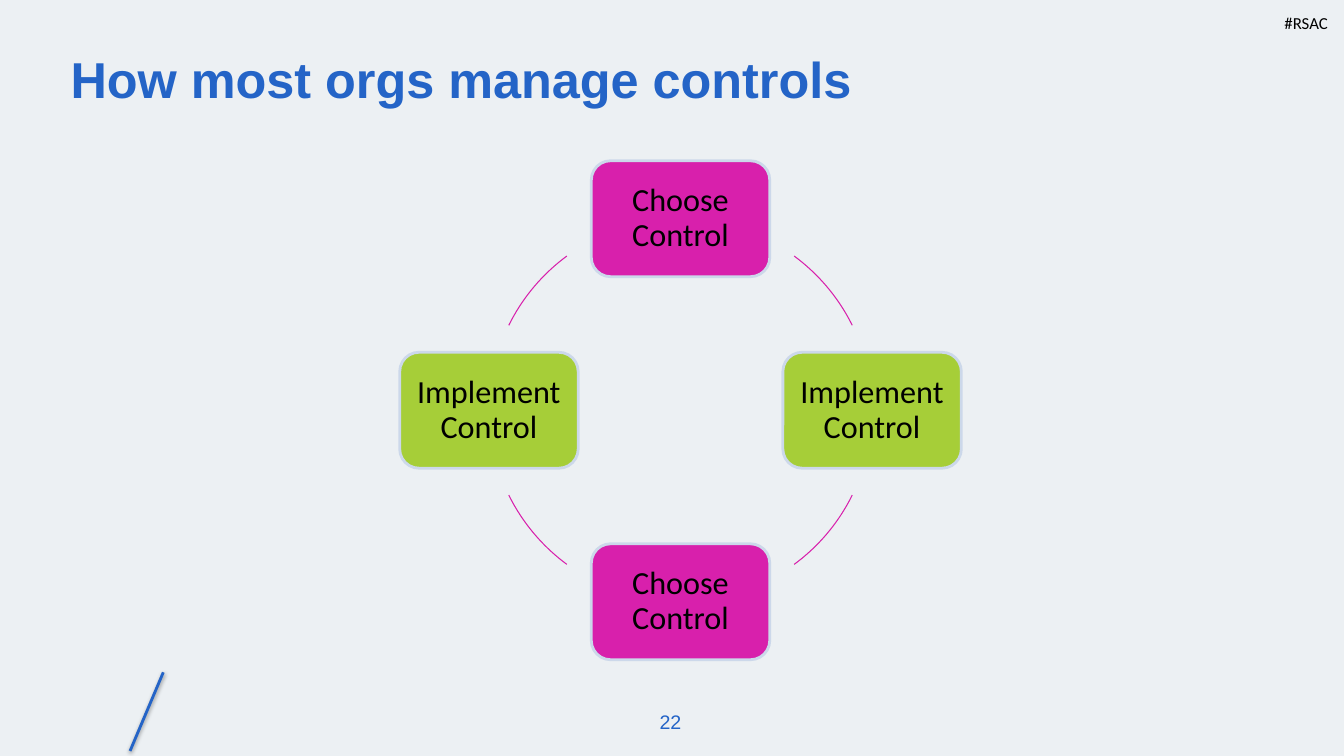
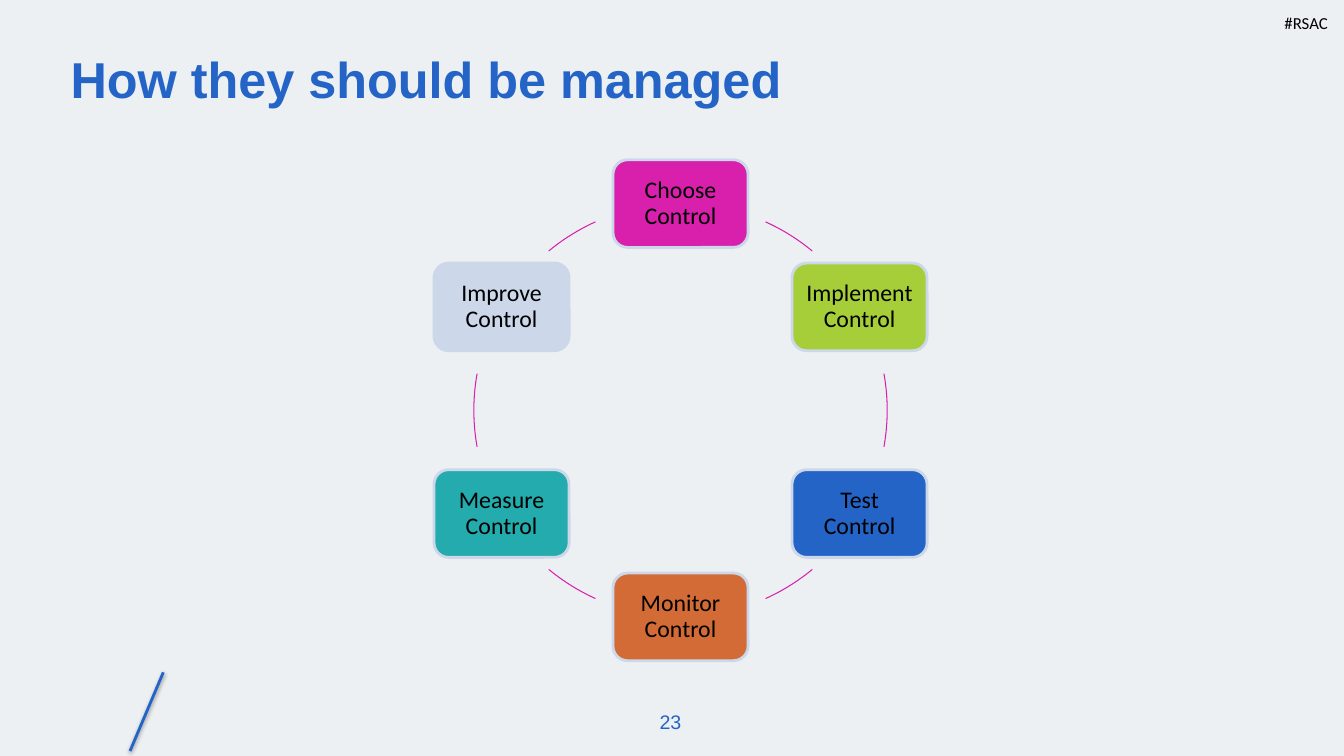
from dataclasses import dataclass
from math import cos, radians, sin

from lxml.etree import SubElement
from pptx import Presentation
from pptx.dml.color import RGBColor
from pptx.enum.shapes import MSO_CONNECTOR, MSO_SHAPE
from pptx.enum.text import MSO_ANCHOR, PP_ALIGN
from pptx.oxml.ns import qn
from pptx.util import Inches, Pt


@dataclass(frozen=True)
class Theme:
    """Colours, fonts and type sizes shared by the slides."""

    background: str = "ECF0F3"
    blue: str = "2464C7"
    magenta: str = "D820AC"
    green: str = "A6CE38"
    orange: str = "D36B37"
    teal: str = "23ABAD"
    pale: str = "CCD8EA"
    black: str = "000000"
    heading_font: str = "Arial"
    body_font: str = "Calibri"
    title_size: int = 36
    number_size: int = 14
    tag_size: int = 12


THEME = Theme()
TAG = "#RSAC"
FIRST_NUMBER = 22
CENTER = (6.75, 4.07)

CYCLES = [
    {
        "title": "How most orgs manage controls",
        "steps": [
            ("Choose Control", THEME.magenta),
            ("Implement Control", THEME.green),
            ("Choose Control", THEME.magenta),
            ("Implement Control", THEME.green),
        ],
        "radius": 1.9,
        "node": (1.77, 1.15),
        "inset": 0.1,
        "size": 23,
        "right_arcs": [(-53.6, -26.3), (26.3, 53.6)],
    },
    {
        "title": "How they should be managed",
        "steps": [
            ("Choose Control", THEME.magenta),
            ("Implement Control", THEME.green),
            ("Test Control", THEME.blue),
            ("Monitor Control", THEME.orange),
            ("Measure Control", THEME.teal),
            ("Improve Control", THEME.pale),
        ],
        "radius": 2.05,
        "node": (1.34, 0.87),
        "inset": 0.07,
        "size": 17,
        "right_arcs": [(-65.7, -50.4), (-10.2, 10.2), (50.4, 65.7)],
    },
]


def color(value):
    return RGBColor.from_string(value)


def write(shape, text, font, size, ink, align=PP_ALIGN.CENTER, inset=(0, 0),
          spacing=None, bold=False):
    frame = shape.text_frame
    frame.word_wrap = True
    frame.vertical_anchor = MSO_ANCHOR.MIDDLE
    frame.margin_left = frame.margin_right = Inches(inset[0])
    frame.margin_top = frame.margin_bottom = Inches(inset[1])
    para = frame.paragraphs[0]
    para.text = text
    para.alignment = align
    para.line_spacing = spacing
    para.font.name = font
    para.font.size = Pt(size)
    para.font.bold = bold
    para.font.color.rgb = color(ink)


def add_text(page, place, text, font, size, ink, **style):
    box = page.shapes.add_textbox(*map(Inches, place))
    write(box, text, font, size, ink, **style)


def add_slash(page):
    ends = map(Inches, (1.62, 6.67, 1.29, 7.45))
    slash = page.shapes.add_connector(MSO_CONNECTOR.STRAIGHT, *ends)
    slash.line.color.rgb = color(THEME.blue)
    slash.line.width = Pt(2)
    effects = SubElement(slash._element.spPr, qn("a:effectLst"))
    shadow = SubElement(effects, qn("a:outerShdw"), blurRad=str(Pt(3.1)),
                        dist=str(Pt(1.6)), dir="5400000", rotWithShape="0")
    tint = SubElement(shadow, qn("a:srgbClr"), val=THEME.black)
    SubElement(tint, qn("a:alpha"), val="38000")


def add_centered(page, kind, x, y, width, height):
    place = map(Inches, (x - width / 2, y - height / 2, width, height))
    shape = page.shapes.add_shape(kind, *place)
    shape.shadow.inherit = False
    return shape


def add_arc(page, radius, start, end):
    arc = add_centered(page, MSO_SHAPE.ARC, *CENTER, 2 * radius, 2 * radius)
    for index, angle in enumerate((start, end)):
        arc.adjustments[index] = angle % 360 * 0.6
    arc.fill.background()
    arc.line.color.rgb = color(THEME.magenta)
    arc.line.width = Pt(0.75)


def add_cycle(page, cycle):
    radius, inset = cycle["radius"], cycle["inset"]
    for start, end in cycle["right_arcs"]:
        add_arc(page, radius, start, end)
        add_arc(page, radius, 180 - end, 180 - start)
    for index, (label, fill) in enumerate(cycle["steps"]):
        angle = radians(360 * index / len(cycle["steps"]) - 90)
        x = CENTER[0] + radius * cos(angle)
        y = CENTER[1] + radius * sin(angle)
        node = add_centered(page, MSO_SHAPE.ROUNDED_RECTANGLE, x, y, *cycle["node"])
        node.fill.solid()
        node.fill.fore_color.rgb = color(fill)
        node.line.color.rgb = color(THEME.pale)
        node.line.width = Pt(2)
        write(node, label, THEME.body_font, cycle["size"], THEME.black,
              inset=(inset, inset), spacing=0.9)


def add_page(deck, number, cycle):
    page = deck.slides.add_slide(deck.slide_layouts[6])
    page.background.fill.solid()
    page.background.fill.fore_color.rgb = color(THEME.background)
    add_text(page, (12.62, 0.13, 0.67, 0.2), TAG, THEME.body_font,
             THEME.tag_size, THEME.black)
    add_slash(page)
    add_cycle(page, cycle)
    add_text(page, (0.7, 0.13, 9.84, 1.37), cycle["title"], THEME.heading_font,
             THEME.title_size, THEME.blue, align=PP_ALIGN.LEFT, spacing=0.9, bold=True)
    add_text(page, (6.35, 6.96, 0.6, 0.4), str(number), THEME.heading_font,
             THEME.number_size, THEME.blue, inset=(0.1, 0.05))


def main():
    deck = Presentation()
    deck.slide_width, deck.slide_height = Inches(13.33), Inches(7.5)
    for number, cycle in enumerate(CYCLES, FIRST_NUMBER):
        add_page(deck, number, cycle)
    deck.save("out.pptx")


if __name__ == "__main__":
    main()
